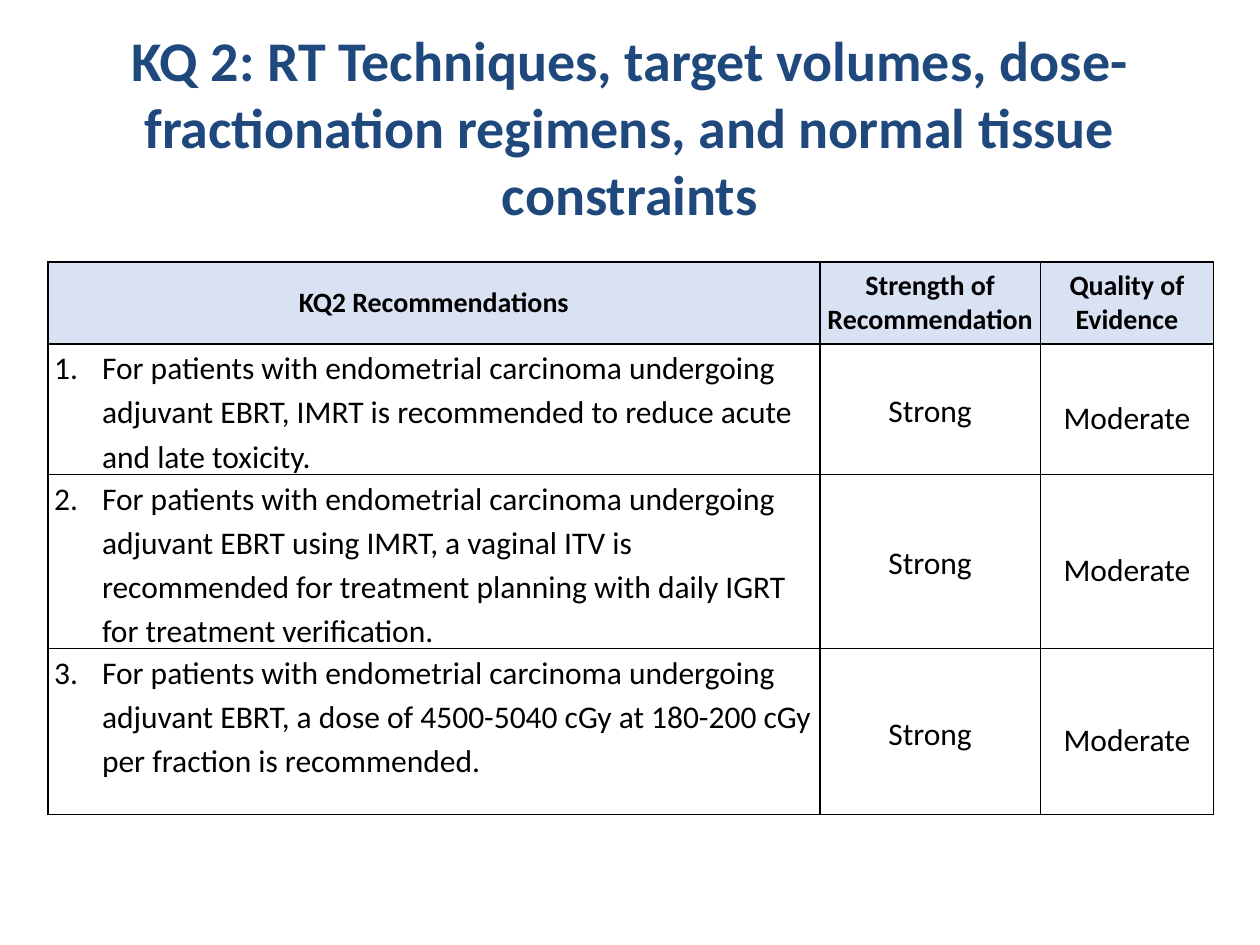
"""Build the KQ 2 recommendations slide."""
from dataclasses import dataclass

import lxml.etree
import pptx
import pptx.dml.color
import pptx.enum.text
import pptx.oxml.ns
import pptx.util

Inches = pptx.util.Inches
Pt = pptx.util.Pt
RGBColor = pptx.dml.color.RGBColor
ALIGN = pptx.enum.text.PP_ALIGN
ANCHOR = pptx.enum.text.MSO_ANCHOR
qn = pptx.oxml.ns.qn


@dataclass(frozen=True)
class Theme:
    """Hold the colours, font and type sizes of the slide."""
    font: str = "Calibri"
    heading: RGBColor = RGBColor(0x1F, 0x49, 0x7D)
    ink: RGBColor = RGBColor(0, 0, 0)
    header_fill: RGBColor = RGBColor(0xD9, 0xE2, 0xF3)
    title_size: int = 32
    header_size: int = 16
    body_size: int = 18
    border_width: int = 1


THEME = Theme()
TITLE = ("KQ 2: RT Techniques, target volumes, dose-fractionation regimens, "
         "and normal tissue constraints")
HEADERS = ["KQ2 Recommendations", "Strength of Recommendation", "Quality of Evidence"]
RECOMMENDATIONS = [
    ("For patients with endometrial carcinoma undergoing adjuvant EBRT, IMRT is "
     "recommended to reduce acute and late toxicity.", "Strong", "Moderate"),
    ("For patients with endometrial carcinoma undergoing adjuvant EBRT using IMRT, "
     "a vaginal ITV is recommended for treatment planning with daily IGRT for "
     "treatment verification.", "Strong", "Moderate"),
    ("For patients with endometrial carcinoma undergoing adjuvant EBRT, a dose of "
     "4500-5040 cGy at 180-200 cGy per fraction is recommended.", "Strong", "Moderate"),
]
COLUMN_WIDTHS = [6.12, 1.75, 1.37]
ROW_HEIGHTS = [0.65, 0.85, 1.08, 1.32]
BODY_SPACING = [1.15, 1.15, 1.5]


def add_text(paragraph, text, size, color, bold=False):
    """Add one styled run to the paragraph."""
    run = paragraph.add_run()
    run.text = text
    run.font.name = THEME.font
    run.font.size = Pt(size)
    run.font.bold = bold
    run.font.color.rgb = color


def number_paragraph(paragraph, number):
    """Give the paragraph a hanging automatic number."""
    properties = paragraph._p.get_or_add_pPr()
    properties.set("marL", str(Inches(0.38)))
    properties.set("indent", str(-Inches(0.38)))
    lxml.etree.SubElement(properties, qn("a:buFont"), typeface="+mj-lt")
    lxml.etree.SubElement(properties, qn("a:buAutoNum"), type="arabicPeriod",
                          startAt=str(number))


def draw_borders(cell):
    """Draw a solid line on all four sides of the cell."""
    properties = cell._tc.get_or_add_tcPr()
    for side in ("a:lnL", "a:lnR", "a:lnT", "a:lnB"):
        line = lxml.etree.SubElement(properties, qn(side),
                                     w=str(Pt(THEME.border_width)))
        fill = lxml.etree.SubElement(line, qn("a:solidFill"))
        lxml.etree.SubElement(fill, qn("a:srgbClr"), val=str(THEME.ink))


def format_cell(cell, fill=None):
    """Set the cell's margins, anchor, borders and fill, and return its paragraph."""
    cell.margin_left = cell.margin_right = Inches(0.05)
    cell.margin_top = cell.margin_bottom = 0
    cell.vertical_anchor = ANCHOR.MIDDLE
    draw_borders(cell)
    if fill is None:
        cell.fill.background()
    else:
        cell.fill.solid()
        cell.fill.fore_color.rgb = fill
    paragraph = cell.text_frame.paragraphs[0]
    paragraph.alignment = ALIGN.CENTER
    return paragraph


def add_title(slide, left, top, width, height):
    """Place the centred slide title in the box."""
    frame = slide.shapes.add_textbox(left, top, width, height).text_frame
    frame.word_wrap = True
    frame.vertical_anchor = ANCHOR.MIDDLE
    heading = frame.paragraphs[0]
    heading.alignment = ALIGN.CENTER
    add_text(heading, TITLE, THEME.title_size, THEME.heading, bold=True)


def add_recommendations(slide, left, top, width, height):
    """Place the table of recommendations in the box."""
    table = slide.shapes.add_table(len(ROW_HEIGHTS), len(COLUMN_WIDTHS),
                                   left, top, width, height).table
    table.first_row = table.horz_banding = False
    for column, share in zip(table.columns, COLUMN_WIDTHS):
        column.width = int(width * share / sum(COLUMN_WIDTHS))
    for row, row_height in zip(table.rows, ROW_HEIGHTS):
        row.height = Inches(row_height)
    for index, header in enumerate(HEADERS):
        paragraph = format_cell(table.cell(0, index), THEME.header_fill)
        add_text(paragraph, header, THEME.header_size, THEME.ink, bold=True)
    for number, recommendation in enumerate(RECOMMENDATIONS, start=1):
        for index, text in enumerate(recommendation):
            cell = table.cell(number, index)
            paragraph = format_cell(cell)
            paragraph.line_spacing = BODY_SPACING[index]
            if index == 0:
                cell.vertical_anchor = ANCHOR.TOP
                paragraph.alignment = ALIGN.LEFT
                number_paragraph(paragraph, number)
            add_text(paragraph, text, THEME.body_size, THEME.ink)


def main():
    """Build and save the slide."""
    deck = pptx.Presentation()
    deck.slide_width, deck.slide_height = Inches(10), Inches(7.5)
    slide = deck.slides.add_slide(deck.slide_layouts[6])
    add_title(slide, Inches(0.5), Inches(0.25), Inches(9), Inches(1.5))
    add_recommendations(slide, Inches(0.38), Inches(2.08), Inches(9.25), Inches(4.35))
    deck.save("out.pptx")


if __name__ == "__main__":
    main()
